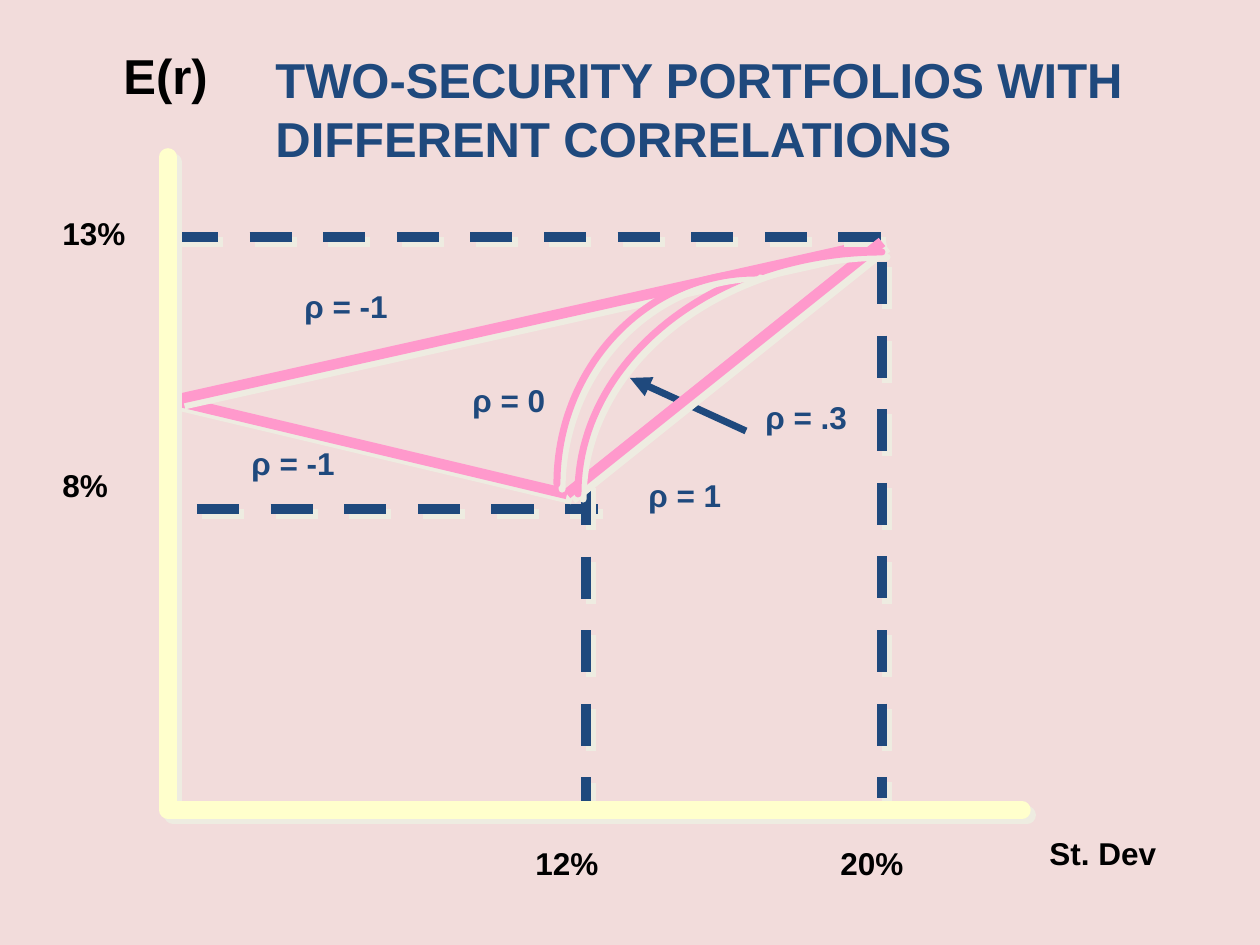
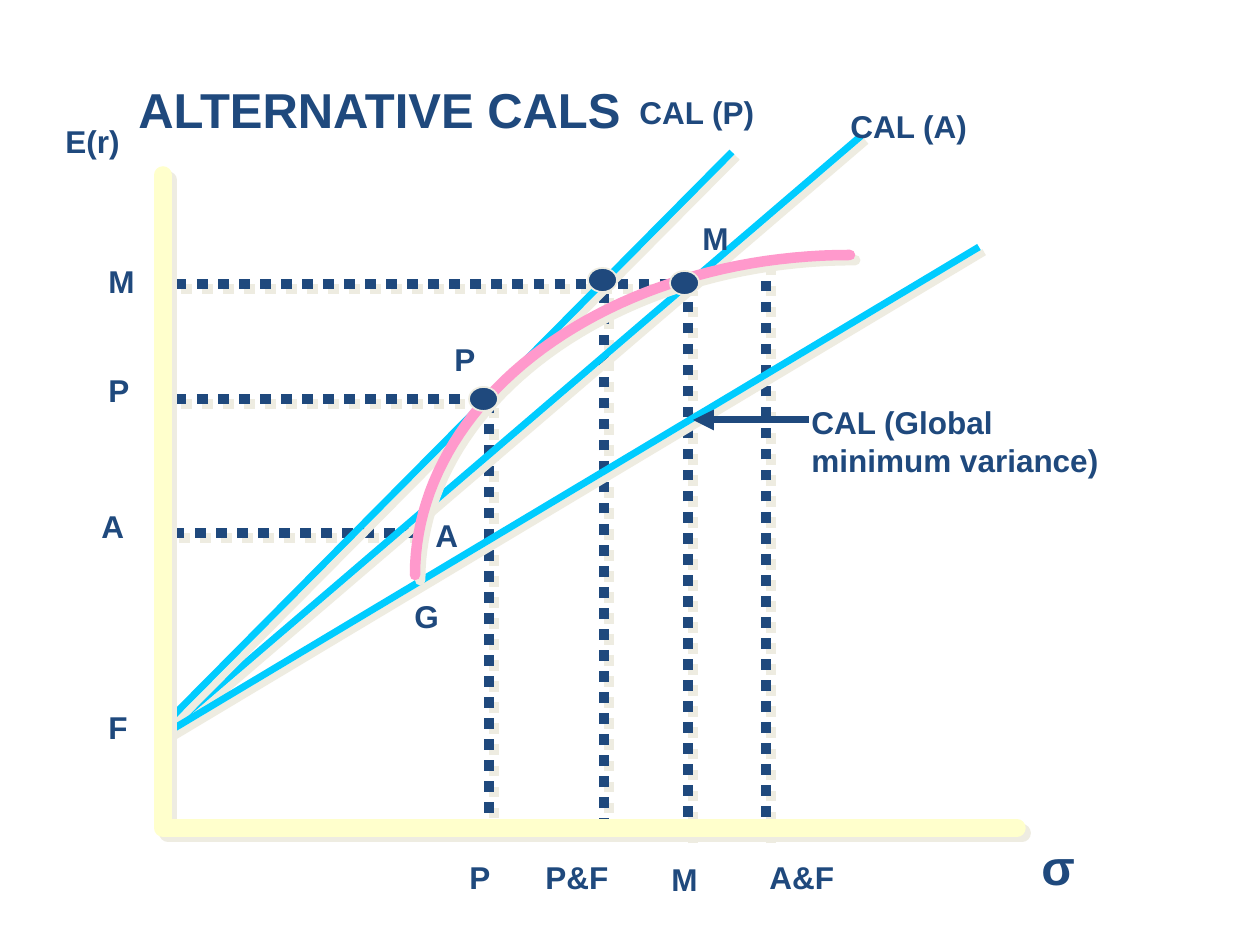
from dataclasses import dataclass
from math import cos, pi, sin

from lxml import etree
from pptx import Presentation
from pptx.dml.color import RGBColor
from pptx.enum.dml import MSO_LINE_DASH_STYLE as Dash
from pptx.enum.shapes import MSO_CONNECTOR as Connector, MSO_SHAPE as Shape
from pptx.enum.text import MSO_AUTO_SIZE as AutoSize
from pptx.oxml.ns import qn
from pptx.util import Emu, Pt

PX_PER_INCH = 126
SLIDE_SIZE = (1260, 945)
LABEL_HEIGHT, TITLE_HEIGHT = 63, 71
AXIS_WIDTH, AXIS_HEIGHT = 854, 653
DOT_SIZE = (29, 24)
CURVE_STEPS = 48


@dataclass(frozen=True)
class Theme:
    font: str = "Arial"
    rose: str = "F2DCDB"
    white: str = "FFFFFF"
    black: str = "000000"
    navy: str = "1F497D"
    pink: str = "FF99CC"
    cyan: str = "00CCFF"
    cream: str = "FFFFCC"
    shade: str = "EEECE1"
    title_size: int = 28
    label_size: int = 18
    hairline: int = 1
    thin: int = 4
    thick: int = 6
    axis: int = 10
    shadow_distance: float = 4.2


def px(value):
    return Emu(round(value * 914400 / PX_PER_INCH))


def color(value):
    return RGBColor.from_string(value)


class Deck:
    def __init__(self, theme):
        self.theme = theme
        self.presentation = Presentation()
        self.presentation.slide_width, self.presentation.slide_height = map(px, SLIDE_SIZE)
        self.slide = None

    def add_slide(self, background):
        self.slide = self.presentation.slides.add_slide(self.presentation.slide_layouts[6])
        fill = self.slide.background.fill
        fill.solid()
        fill.fore_color.rgb = color(background)

    def text(self, text, left, top, width, height=LABEL_HEIGHT, *,
             size=None, ink=None, wrap=False):
        """Place bold text; each line break starts a new paragraph."""
        box = self.slide.shapes.add_textbox(*map(px, (left, top, width, height)))
        frame = box.text_frame
        frame.word_wrap = wrap
        frame.auto_size = AutoSize.SHAPE_TO_FIT_TEXT
        frame.text = text
        for paragraph in frame.paragraphs:
            font = paragraph.runs[0].font
            font.name = self.theme.font
            font.size = Pt(size or self.theme.label_size)
            font.bold = True
            font.color.rgb = color(ink or self.theme.navy)

    def title(self, text, left, top, width, height=TITLE_HEIGHT):
        self.text(text, left, top, width, height, size=self.theme.title_size, wrap=True)

    def stroke(self, shape, ink, weight, dash=None, shadow=True):
        """Set the line of a shape and its hard offset shadow; return the line element."""
        shape.line.color.rgb = color(ink)
        shape.line.width = Pt(weight)
        if dash:
            shape.line.dash_style = dash
        properties = shape.element.spPr
        effects = etree.SubElement(properties, qn("a:effectLst"))
        if shadow:
            outer = etree.SubElement(effects, qn("a:outerShdw"), blurRad="0",
                                     dist=str(Pt(self.theme.shadow_distance)),
                                     dir=str(45 * 60000), algn="ctr", rotWithShape="0")
            etree.SubElement(outer, qn("a:srgbClr"), val=self.theme.shade)
        return properties.find(qn("a:ln"))

    def line(self, start, end, ink, weight, dash=None, shadow=True):
        connector = self.slide.shapes.add_connector(
            Connector.STRAIGHT, *map(px, (*start, *end)))
        return self.stroke(connector, ink, weight, dash, shadow)

    def guide(self, start, end, dash):
        self.line(start, end, self.theme.navy, self.theme.thick, dash)

    def arrow(self, start, end):
        line = self.line(start, end, self.theme.navy, self.theme.thin, shadow=False)
        etree.SubElement(line, qn("a:tailEnd"), type="triangle")

    def outline(self, points, ink, weight):
        """Draw an open outline with round ends."""
        first, *rest = [(px(x), px(y)) for x, y in points]
        builder = self.slide.shapes.build_freeform(*first)
        builder.add_line_segments(rest, close=False)
        shape = builder.convert_to_shape()
        shape.fill.background()
        self.stroke(shape, ink, weight).set("cap", "rnd")

    def frontier(self, start, end, weight):
        """Draw a quarter ellipse that leaves start upward and reaches end level."""
        (left, bottom), (right, top) = start, end
        angles = [step * pi / 2 / CURVE_STEPS for step in range(CURVE_STEPS + 1)]
        self.outline([(right - (right - left) * cos(angle), bottom - (bottom - top) * sin(angle))
                      for angle in angles], self.theme.pink, weight)

    def axes(self, left, top):
        bottom = top + AXIS_HEIGHT
        self.outline([(left, top), (left, bottom), (left + AXIS_WIDTH, bottom)],
                     self.theme.cream, self.theme.axis)

    def dot(self, left, top):
        shape = self.slide.shapes.add_shape(Shape.OVAL, *map(px, (left, top, *DOT_SIZE)))
        shape.fill.solid()
        shape.fill.fore_color.rgb = color(self.theme.navy)
        self.stroke(shape, self.theme.shade, self.theme.hairline, shadow=False)


def add_correlations(deck):
    theme = deck.theme
    deck.add_slide(theme.rose)

    security_low, security_high = (567, 494), (882, 242)
    deck.guide((882, 262), (882, 798), Dash.DASH)
    deck.guide((197, 509), (598, 509), Dash.DASH)
    deck.line(security_low, (168, 399), theme.pink, theme.thick)
    deck.arrow((746, 431), (630, 378))
    deck.guide((586, 483), (586, 814), Dash.DASH)
    deck.line(security_high, (179, 399), theme.pink, theme.thick)
    deck.guide((176, 237), (882, 237), Dash.DASH)
    deck.line(security_low, security_high, theme.pink, theme.thick)
    deck.frontier((578, 494), (882, 252), theme.thin)
    deck.frontier((557, 484), (756, 273), theme.thin)

    for text, left, top, width in (
        ("ρ = 0", 460, 375, 118), ("ρ = 1", 636, 470, 118), ("ρ = -1", 239, 438, 134),
        ("ρ = -1", 292, 281, 134), ("ρ = .3", 753, 392, 131),
    ):
        deck.text(text, left, top, width)
    for text, left, top, width in (
        ("13%", 50, 208, 110), ("8%", 50, 460, 86), ("12%", 523, 838, 110),
        ("20%", 828, 838, 110), ("St. Dev", 1037, 828, 168),
    ):
        deck.text(text, left, top, width, ink=theme.black)
    deck.axes(168, 157)
    deck.text("E(r)", 111, 39, 110, TITLE_HEIGHT, size=theme.title_size, ink=theme.black)
    deck.title("TWO-SECURITY PORTFOLIOS WITH DIFFERENT CORRELATIONS", 263, 43, 902, 130)


def add_allocation_lines(deck):
    theme = deck.theme
    deck.add_slide(theme.white)

    for x, bottom, top in ((489, 834, 388), (604, 829, 278), (688, 838, 286), (766, 838, 262)):
        deck.guide((x, bottom), (x, top), Dash.ROUND_DOT)
    for y, left, right in ((399, 176, 489), (533, 174, 426), (284, 176, 678)):
        deck.guide((left, y), (right, y), Dash.ROUND_DOT)
    for start, end in (
        ((165, 732), (861, 136)), ((165, 724), (732, 152)), ((163, 735), (979, 247)),
    ):
        deck.line(start, end, theme.cyan, theme.thin)
    deck.frontier((415, 575), (850, 255), theme.thick)

    for text, left, top, width in (
        ("E(r)", 53, 116, 97), ("CAL (A)", 838, 101, 181), ("CAL (P)", 627, 87, 179),
        ("M", 96, 256, 60), ("P", 96, 365, 53), ("A", 89, 501, 55), ("F", 96, 702, 50),
        ("P", 457, 852, 53), ("P&F", 533, 852, 108), ("M", 659, 854, 60),
        ("A&F", 757, 852, 111),
        ("A", 423, 510, 55), ("G", 402, 591, 58), ("P", 442, 334, 53), ("M", 690, 213, 60),
    ):
        deck.text(text, left, top, width)
    deck.text("CAL (Global\nminimum variance)", 799, 397, 408, 113)
    for left, top in ((469, 387), (670, 271), (588, 268)):
        deck.dot(left, top)
    deck.axes(163, 175)
    deck.title("σ", 1029, 830, 146)
    deck.title("ALTERNATIVE CALS", 126, 73, 524)
    deck.arrow((809, 420), (693, 420))


def main():
    deck = Deck(Theme())
    add_correlations(deck)
    add_allocation_lines(deck)
    deck.presentation.save("out.pptx")


if __name__ == "__main__":
    main()
